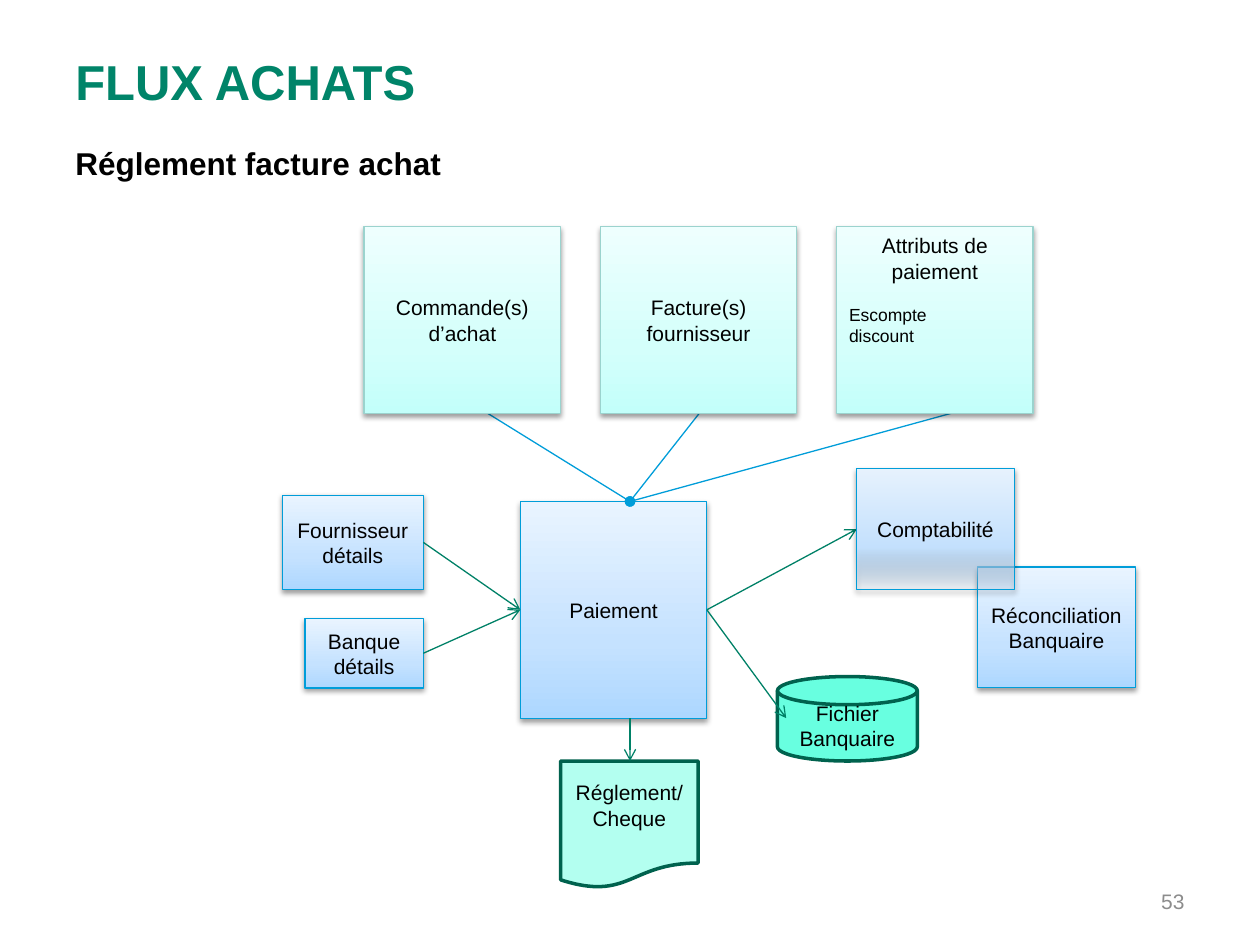
from lxml import etree
from pptx import Presentation, util as u
from pptx.dml.color import RGBColor
from pptx.enum import shapes, text
from pptx.oxml import parse_xml
from pptx.oxml.ns import nsdecls, qn

COLOURS = {
    "title": "008469", "black": "000000", "number": "8C8C8C",
    "blue": "009DD9", "green": "008167", "dark": "00624E",
    "aqua_line": "9BD3CE", "disk": "68FFE0", "document": "B3FFF0",
}
BLUE_STOPS = ("ADD7FF", "C5E2FF", "E9F4FF")
AQUA_STOPS = ("C3FFFA", "D4FFFB", "EEFFFE")
CENTER, LEFT, RIGHT = text.PP_ALIGN.CENTER, text.PP_ALIGN.LEFT, text.PP_ALIGN.RIGHT
MIDDLE, TOP = text.MSO_ANCHOR.MIDDLE, text.MSO_ANCHOR.TOP
SHAPES = shapes.MSO_SHAPE


def colour(name):
    """Return the named colour."""
    return RGBColor.from_string(COLOURS[name])


def inches(values):
    """Turn numbers into lengths."""
    return [u.Inches(value) for value in values]


def write(shape, content, size=12, ink="black", bold=False, align=CENTER, anchor=MIDDLE):
    """Fill a shape with evenly formatted text."""
    frame = shape.text_frame
    frame.word_wrap = True
    frame.vertical_anchor = anchor
    frame.text = content
    for paragraph in frame.paragraphs:
        paragraph.alignment = align
        for run in paragraph.runs:
            run.font.name = "Arial"
            run.font.size = u.Pt(size)
            run.font.bold = bold
            run.font.color.rgb = colour(ink)


def add_label(slide, box, content, **style):
    """Add a text box."""
    write(slide.shapes.add_textbox(*inches(box)), content, **style)


def add_block(slide, box, content, line, kind=SHAPES.RECTANGLE, width=0.75, **style):
    """Add an outlined shape with text."""
    shape = slide.shapes.add_shape(kind, *inches(box))
    shape.shadow.inherit = False
    shape.line.color.rgb = colour(line)
    shape.line.width = u.Pt(width)
    write(shape, content, **style)
    return shape


def add_card(slide, box, content, line="blue", stops=BLUE_STOPS, alpha=100, **style):
    """Add a shaded rectangle with a soft shadow."""
    shape = add_block(slide, box, content, line, **style)
    stop_xml = "".join(
        f'<a:gs pos="{position}000"><a:srgbClr val="{value}">'
        f'<a:alpha val="{opacity}000"/></a:srgbClr></a:gs>'
        for position, value, opacity in zip((0, 35, 100), stops, (alpha, 100, 100)))
    gradient = parse_xml(
        f'<a:gradFill {nsdecls("a")} rotWithShape="1"><a:gsLst>{stop_xml}</a:gsLst>'
        '<a:lin ang="16200000" scaled="0"/></a:gradFill>')
    properties = shape.fill._xPr
    properties.find(qn("a:prstGeom")).addnext(gradient)
    properties.find(qn("a:effectLst")).append(parse_xml(
        f'<a:outerShdw {nsdecls("a")} blurRad="40000" dist="20000" dir="5400000" '
        'rotWithShape="0"><a:srgbClr val="000000"><a:alpha val="38000"/>'
        '</a:srgbClr></a:outerShdw>'))
    return shape


def add_link(slide, start, end, line="green", tail="arrow"):
    """Add a straight line with an end mark."""
    connector = slide.shapes.add_connector(
        shapes.MSO_CONNECTOR.STRAIGHT, *inches(start + end))
    connector.line.color.rgb = colour(line)
    connector.line.width = u.Pt(0.75)
    etree.SubElement(connector.line._get_or_add_ln(), qn("a:tailEnd"), type=tail)
    etree.SubElement(connector._element.spPr, qn("a:effectLst"))


def add_heading(slide, left, top, width):
    """Add the title and subtitle."""
    add_label(slide, (left, top, width, 0.62), "FLUX ACHATS", size=28,
              ink="title", bold=True, align=LEFT)
    add_label(slide, (left, top + 0.76, width, 0.62), "Réglement facture achat",
              size=18, bold=True, align=LEFT, anchor=TOP)


def add_sources(slide, left, top, hub):
    """Add the row of source documents, linked to the hub point."""
    width, height, step = 1.56, 1.48, 1.875
    for offset in (0.98, 2.66, 4.66):
        add_link(slide, (left + offset, top + height), hub, "blue", "oval")
    contents = ("Commande(s) d’achat", "Facture(s) fournisseur",
                "Attributs de paiement\nEscompte\ndiscount")
    cards = [add_card(slide, (left + index * step, top, width, height), content,
                      "aqua_line", AQUA_STOPS)
             for index, content in enumerate(contents)]
    frame = cards[-1].text_frame
    frame.vertical_anchor = TOP
    details = frame.paragraphs[1:]
    details[0].space_before = u.Pt(12)
    for paragraph in details:
        paragraph.alignment = LEFT
        paragraph.runs[0].font.size = u.Pt(10)


def add_inputs(slide, left, top, target):
    """Add the supplier and bank details, pointing at the target."""
    width = 1.12
    boxes = (("Banque détails", 0.18, 0.98, 0.55),
             ("Fournisseur\ndétails", 0, 0, 0.75))
    for content, indent, drop, height in boxes:
        add_card(slide, (left + indent, top + drop, width - indent, height), content)
        add_link(slide, (left + width, top + drop + height / 2), target)


def add_outputs(slide, left, top, origin):
    """Add the accounting, reconciliation and bank file outputs."""
    width, height = 1.25, 0.96
    add_card(slide, (left + 0.96, top + 0.78, width, height), "Réconciliation\nBanquaire")
    disk = add_block(slide, (left - 0.63, top + 1.65, 1.11, 0.67), "Fichier\nBanquaire",
                     "dark", SHAPES.FLOWCHART_MAGNETIC_DISK, 2)
    disk.fill.solid()
    disk.fill.fore_color.rgb = colour("disk")
    add_link(slide, origin, (left - 0.56, top + 1.98))
    add_link(slide, origin, (left, top + height / 2))
    add_card(slide, (left, top, width, height), "Comptabilité", alpha=6)


def add_cheque(slide, left, top, origin):
    """Add the payment document below its origin."""
    document = add_block(slide, (left, top, 1.09, 1.01), "Réglement/ Cheque", "dark",
                         SHAPES.FLOWCHART_DOCUMENT, 2, anchor=TOP)
    document.text_frame.margin_top = u.Inches(0.15)
    document.fill.solid()
    document.fill.fore_color.rgb = colour("document")
    add_link(slide, origin, (origin[0], top))


def build_flow(slide, left, top, width, height):
    """Add the payment and everything around it."""
    middle, right, bottom = top + height / 2, left + width, top + height
    axis = left + 0.87
    add_card(slide, (left, top, width, height), "Paiement")
    add_sources(slide, left - 1.24, top - 2.18, (axis, top))
    add_inputs(slide, left - 1.89, top - 0.05, (left, middle))
    add_cheque(slide, left + 0.32, bottom + 0.34, (axis, bottom))
    add_outputs(slide, left + 2.67, top - 0.26, (right, middle))


def main():
    """Build and save the slide."""
    presentation = Presentation()
    presentation.slide_width, presentation.slide_height = inches((10, 7.5))
    slide = presentation.slides.add_slide(presentation.slide_layouts[6])
    add_heading(slide, 0.5, 0.33, 9)
    build_flow(slide, 4.13, 3.98, 1.48, 1.72)
    add_label(slide, (7.17, 6.95, 2.33, 0.4), "53", ink="number", align=RIGHT)
    presentation.save("out.pptx")


if __name__ == "__main__":
    main()
